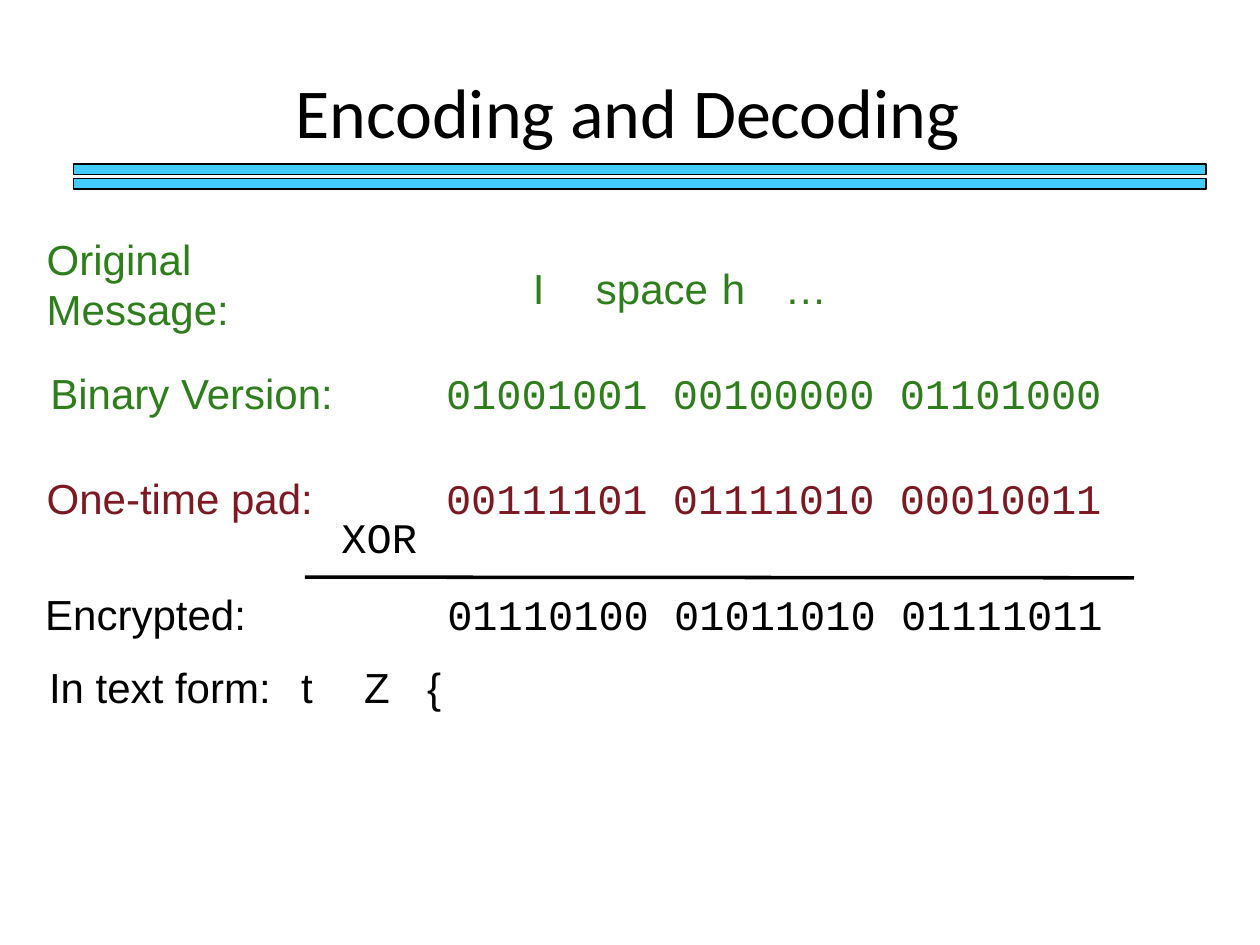
from lxml.etree import SubElement
from pptx import Presentation
from pptx.dml.color import RGBColor
from pptx.enum.shapes import MSO_CONNECTOR as Connector, MSO_SHAPE as Shape
from pptx.enum.text import MSO_ANCHOR as Anchor, PP_ALIGN as Align
from pptx.oxml.ns import qn
from pptx.util import Pt

# Content
TITLE = "Encoding and Decoding"
GREEN, RED, BLACK, BLUE = "2E7E1C", "7C1923", "000000", "42CBFD"
SANS, MONO = "Arial", "Courier New"
LINE_HEIGHT = 35.3
INDENT = 2.9

# text, left, top, width, font, colour, tab stops
ENTRIES = [
    ("I\tspace\th\t…", 301.7, 149.8, 386.6, SANS, GREEN, (108.8, 259, 353)),
    ("01001001 00100000 01101000", 252, 210.2, 532, MONO, GREEN, ()),
    ("Original Message:", 23.8, 133.2, 166.3, SANS, GREEN, ()),
    ("Binary Version:", 25.9, 210.2, 208, SANS, GREEN, ()),
    ("00111101 01111010 00010011", 252, 270, 386.6, MONO, RED, ()),
    ("One-time pad:", 23.8, 270, 164.2, SANS, RED, ()),
    ("XOR", 192.2, 292.3, 55.4, MONO, BLACK, ()),
    ("01110100 01011010 01111011", 252.7, 336.2, 386.6, MONO, BLACK, ()),
    ("Encrypted:", 23, 336.2, 126.7, SANS, BLACK, ()),
    ("In text form:\tt\tZ\t{", 25.2, 378, 617, SANS, BLACK, (282.6, 415.5, 536)),
]


def color(value):
    return RGBColor.from_string(value)


def add_text(slide, text, box, font, size, fill, margins=(0, 0, 2.9, 0)):
    shape = slide.shapes.add_textbox(*map(Pt, box))
    frame = shape.text_frame
    frame.word_wrap = True
    (frame.margin_left, frame.margin_top,
     frame.margin_right, frame.margin_bottom) = map(Pt, margins)
    frame.text = text
    paragraph = frame.paragraphs[0]
    for run in paragraph.runs:
        run.font.name = font
        run.font.size = Pt(size)
        run.font.color.rgb = color(fill)
    return frame, paragraph


def set_indent(paragraph, stops):
    properties = paragraph._p.get_or_add_pPr()
    properties.set("marL", str(Pt(INDENT)))
    properties.set("indent", "0")
    if stops:
        tabs = SubElement(properties, qn("a:tabLst"))
        for stop in stops:
            SubElement(tabs, qn("a:tab"), pos=str(Pt(stop)), algn="l")


presentation = Presentation()
presentation.slide_width, presentation.slide_height = Pt(720), Pt(540)
slide = presentation.slides.add_slide(presentation.slide_layouts[6])

# Title
frame, paragraph = add_text(slide, TITLE, (54, 0, 612, 126), "Calibri", 40,
                            BLACK, (7.2, 3.6, 10, 3.6))
frame.vertical_anchor = Anchor.MIDDLE
paragraph.alignment = Align.CENTER

# Double bar under the title
for top in (93.8, 102):
    bar = slide.shapes.add_shape(Shape.RECTANGLE, Pt(41.8), Pt(top), Pt(647.3), Pt(6))
    bar.shadow.inherit = False
    bar.fill.solid()
    bar.fill.fore_color.rgb = color(BLUE)
    bar.line.color.rgb = color(BLACK)
    bar.line.width = Pt(0.75)

# Labels and values
for text, left, top, width, font, fill, stops in ENTRIES:
    lines = 2 if text == "Original Message:" else 1
    frame, paragraph = add_text(
        slide, text, (left, top, width, lines * LINE_HEIGHT), font, 24, fill)
    set_indent(paragraph, stops)

# Rule above the XOR result
rule = slide.shapes.add_connector(Connector.STRAIGHT, Pt(174.2), Pt(329.8), Pt(648), Pt(330.2))
rule.line.color.rgb = color(BLACK)
rule.line.width = Pt(2)
SubElement(rule._element.spPr, qn("a:effectLst"))

presentation.save("out.pptx")
